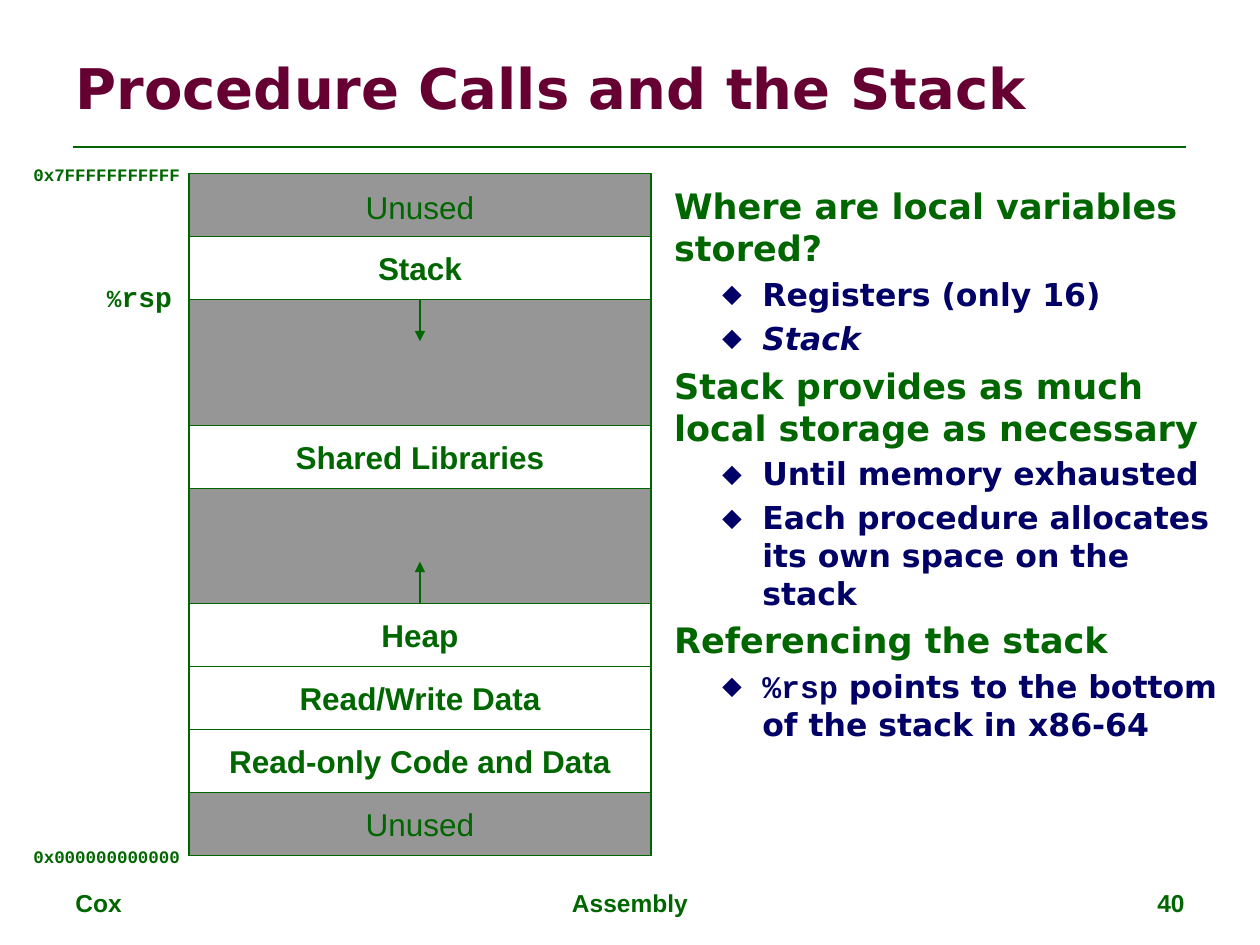
from dataclasses import dataclass
from typing import Optional

from lxml.etree import SubElement
from pptx import Presentation
from pptx.dml.color import RGBColor
from pptx.enum.shapes import MSO_CONNECTOR, MSO_SHAPE
from pptx.enum.text import MSO_ANCHOR, MSO_AUTO_SIZE, PP_ALIGN
from pptx.oxml.ns import qn
from pptx.util import Pt

GREEN = RGBColor(0x00, 0x66, 0x00)
NAVY = RGBColor(0x00, 0x00, 0x66)
MAROON = RGBColor(0x66, 0x00, 0x33)
GREY = RGBColor(0x96, 0x96, 0x96)
WHITE = RGBColor(0xFF, 0xFF, 0xFF)
SANS, HEADING, MONO = "Arial", "DejaVu Sans", "Courier New"

MEMORY_LEFT, MEMORY_TOP, MEMORY_WIDTH, MEMORY_HEIGHT = 108, 99, 264, 390
MEMORY_MIDDLE = MEMORY_LEFT + MEMORY_WIDTH / 2
REGION_HEIGHT = 36


@dataclass
class Region:
    name: str
    top: float
    used: bool = True
    height: float = REGION_HEIGHT


@dataclass
class Label:
    text: str
    left: float
    top: float
    width: float
    height: float
    size: float = 14
    font: str = SANS
    align: Optional[PP_ALIGN] = None
    wrap: bool = True


@dataclass
class Topic:
    heading: str
    points: list  # each point is a list of (text, format) runs


REGIONS = [
    Region("Shared Libraries", 243),
    Region("Heap", 345),
    Region("Read/Write Data", 381),
    Region("Read-only Code and Data", 417),
    Region("Unused", 453, used=False),
    Region("Unused", MEMORY_TOP, used=False, height=39),
    Region("Stack", 135),
]

LABELS = [
    Label("Cox", 36, 504, 168, 25),
    Label("Assembly", 246, 504, 228, 25, align=PP_ALIGN.CENTER),
    Label("40", 516, 504, 168, 25, align=PP_ALIGN.RIGHT),
    Label("0x7FFFFFFFFFFF", 12, 90, 99, 19.4, size=10, font=MONO, wrap=False),
    Label("0x000000000000", 12, 480, 99, 19.4, size=10, font=MONO, wrap=False),
]

TOPICS = [
    Topic("Where are local variables stored?",
          [[("Registers (only 16)", {})], [("Stack", {"italic": True})]]),
    Topic("Stack provides as much local storage as necessary",
          [[("Until memory exhausted", {})],
           [("Each procedure allocates its own space on the stack", {})]]),
    Topic("Referencing the stack",
          [[("%rsp", {"font": MONO}),
            (" points to the bottom of the stack in x86-64", {})]]),
]


def write(paragraph, text: str, *, size: float, font: str = SANS,
          color: RGBColor = GREEN, bold: bool = True,
          italic: bool = False) -> None:
    run = paragraph.add_run()
    run.text = text
    run.font.size = Pt(size)
    run.font.name = font
    run.font.color.rgb = color
    run.font.bold = bold
    run.font.italic = italic


def add_region(slide, region: Region):
    box = slide.shapes.add_shape(
        MSO_SHAPE.RECTANGLE, Pt(MEMORY_LEFT), Pt(region.top),
        Pt(MEMORY_WIDTH), Pt(region.height))
    box.shadow.inherit = False
    if region.used:
        box.fill.solid()
        box.fill.fore_color.rgb = WHITE
    else:
        box.fill.background()
    box.line.color.rgb = GREEN
    box.line.width = Pt(0.75)
    frame = box.text_frame
    frame.word_wrap = False
    frame.vertical_anchor = MSO_ANCHOR.MIDDLE
    if region.name:
        frame.paragraphs[0].alignment = PP_ALIGN.CENTER
        write(frame.paragraphs[0], region.name, size=18, bold=region.used)
    return box


def add_label(slide, label: Label):
    frame = slide.shapes.add_textbox(
        Pt(label.left), Pt(label.top), Pt(label.width), Pt(label.height)).text_frame
    frame.word_wrap = label.wrap
    paragraph = frame.paragraphs[0]
    paragraph.alignment = label.align
    write(paragraph, label.text, size=label.size, font=label.font)
    return paragraph


def add_line(slide, start: tuple, end: tuple, width: float, arrow: bool = False):
    line = slide.shapes.add_connector(
        MSO_CONNECTOR.STRAIGHT, *(Pt(value) for value in start + end))
    line.line.color.rgb = GREEN
    line.line.width = Pt(width)
    if arrow:
        SubElement(line.line._get_or_add_ln(), qn("a:tailEnd"), type="triangle")
    SubElement(line._element.spPr, qn("a:effectLst"))
    return line


def add_growth_arrow(slide, region_box, side: int, start_y: float, end_y: float) -> None:
    arrow = add_line(slide, (MEMORY_MIDDLE, start_y), (MEMORY_MIDDLE, end_y),
                     0.75, arrow=True)
    arrow.begin_connect(region_box, side)


def set_indent(paragraph, margin: float, indent: float, bullet: str = "") -> None:
    properties = paragraph._p.get_or_add_pPr()
    properties.set("marL", str(Pt(margin)))
    properties.set("indent", str(Pt(indent)))
    if bullet:
        SubElement(properties, qn("a:buSzPct"), val="90000")
        SubElement(properties, qn("a:buChar"), char=bullet)
    else:
        SubElement(properties, qn("a:buNone"))


def place(placeholder, left: float, top: float, width: float, height: float):
    placeholder.left, placeholder.top = Pt(left), Pt(top)
    placeholder.width, placeholder.height = Pt(width), Pt(height)
    placeholder.text_frame.auto_size = MSO_AUTO_SIZE.NONE
    return placeholder.text_frame


def fill_topics(frame) -> None:
    paragraph = frame.paragraphs[0]
    for number, topic in enumerate(TOPICS):
        if number:
            paragraph = frame.add_paragraph()
        set_indent(paragraph, 0, 0)
        write(paragraph, topic.heading, size=20, font=HEADING)
        for point in topic.points:
            paragraph = frame.add_paragraph()
            paragraph.level = 1
            set_indent(paragraph, 50.4, -23, "⬥")
            for text, extra in point:
                write(paragraph, text,
                      **{"size": 18, "font": HEADING, "color": NAVY, **extra})


def main() -> None:
    deck = Presentation()
    deck.slide_width, deck.slide_height = Pt(720), Pt(540)
    slide = deck.slides.add_slide(deck.slide_layouts[1])

    # Title and rule
    title = place(slide.shapes.title, 36, 21.6, 648, 56)
    title.vertical_anchor = MSO_ANCHOR.MIDDLE
    title.paragraphs[0].alignment = PP_ALIGN.LEFT
    write(title.paragraphs[0], "Procedure Calls and the Stack",
          size=32, font=HEADING, color=MAROON)
    add_line(slide, (42, 84), (678, 84), 1.5)

    # Topic list
    fill_topics(place(slide.placeholders[1], 378, 102, 330, 380))

    # Memory map
    memory = add_region(slide, Region("", MEMORY_TOP, height=MEMORY_HEIGHT))
    memory.fill.fore_color.rgb = GREY
    boxes = {region.name: add_region(slide, region) for region in REGIONS}
    add_growth_arrow(slide, boxes["Heap"], 0, 345, 321)
    add_growth_arrow(slide, boxes["Stack"], 2, 171, 195)

    # Footer, addresses and stack pointer
    for label in LABELS:
        add_label(slide, label)
    pointer = add_label(slide, Label("%", 54, 156, 52, 26.6, font=MONO, wrap=False))
    write(pointer, "rsp", size=16, font=MONO)

    deck.save("out.pptx")


if __name__ == "__main__":
    main()
